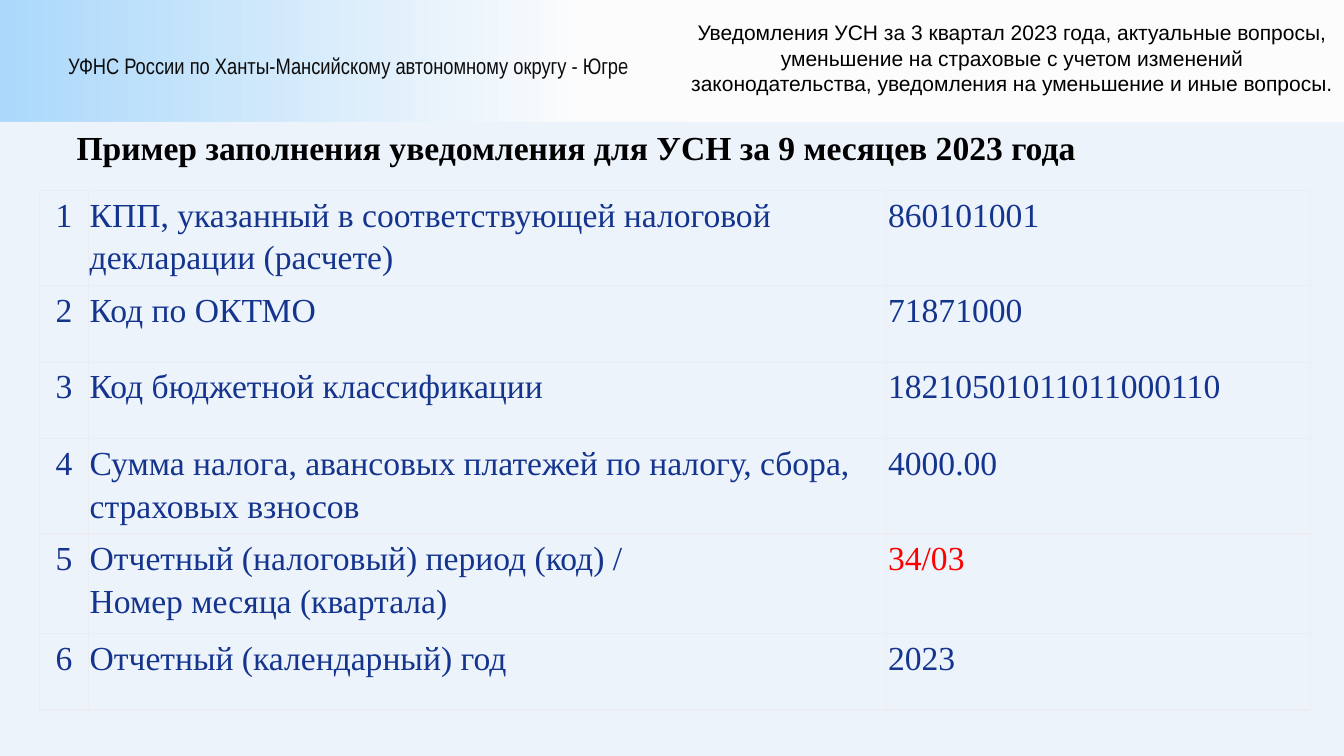
from dataclasses import dataclass

from lxml.etree import SubElement
from pptx import Presentation
from pptx.dml.color import RGBColor as RGB
from pptx.enum.shapes import MSO_SHAPE as SHAPE
from pptx.enum.text import MSO_ANCHOR as ANCHOR, PP_ALIGN as ALIGN
from pptx.oxml.ns import qn
from pptx.util import Cm, Pt


@dataclass(frozen=True)
class Theme:
    sky: str = "ABD8FB"
    header: str = "FCFCFC"
    page: str = "ECF3FA"
    border: str = "EBEDF2"
    ink: str = "000000"
    agency_ink: str = "0D0D0D"
    table_ink: str = "14348E"
    accent: str = "FF0000"
    sans: str = "Arial"
    narrow: str = "Arial Narrow"
    serif: str = "Times New Roman"
    topic_size: int = 15
    agency_size: int = 16
    main_size: int = 24


class Deck:
    def __init__(self, theme, width, height):
        self.theme = theme
        self.prs = Presentation()
        self.prs.slide_width, self.prs.slide_height = Cm(width), Cm(height)
        self.s = self.prs.slides.add_slide(self.prs.slide_layouts[6])

    def style(self, p, text, font, size, color, bold=False, align=ALIGN.LEFT):
        p.text = text
        p.alignment = align
        p.font.name, p.font.size, p.font.bold = font, Pt(size), bold
        p.font.color.rgb = RGB.from_string(color)

    def rect(self, x, y, w, h, color, fade_to=None):
        """Add a borderless rectangle, plain or fading from left to right."""
        sp = self.s.shapes.add_shape(SHAPE.RECTANGLE, Cm(x), Cm(y), Cm(w), Cm(h))
        sp.shadow.inherit = False
        sp.line.fill.background()
        if fade_to:
            sp.fill.gradient()
            sp.fill.gradient_angle = 0
            for stop, stop_color, position in zip(
                    sp.fill.gradient_stops, (color, fade_to), (0, 0.85)):
                stop.color.rgb = RGB.from_string(stop_color)
                stop.position = position
        else:
            sp.fill.solid()
            sp.fill.fore_color.rgb = RGB.from_string(color)

    def text(self, x, y, w, h, text, *style, anchor=ANCHOR.TOP, **options):
        tf = self.s.shapes.add_textbox(Cm(x), Cm(y), Cm(w), Cm(h)).text_frame
        tf.word_wrap = True
        tf.vertical_anchor = anchor
        self.style(tf.paragraphs[0], text, *style, **options)

    def border(self, cell):
        tc_pr = cell._tc.get_or_add_tcPr()
        for side in ("a:lnL", "a:lnR", "a:lnT", "a:lnB"):
            ln = SubElement(tc_pr, qn(side), w=str(Pt(1)))
            fill = SubElement(ln, qn("a:solidFill"))
            SubElement(fill, qn("a:srgbClr"), val=self.theme.border)

    def table(self, x, y, widths, heights, rows, accent_cell):
        th = self.theme
        table = self.s.shapes.add_table(
            len(rows), len(widths), Cm(x), Cm(y),
            Cm(sum(widths)), Cm(sum(heights))).table
        table.first_row = table.horz_banding = False
        for column, width in zip(table.columns, widths):
            column.width = Cm(width)
        for i, (row, height) in enumerate(zip(rows, heights)):
            table.rows[i].height = Cm(height)
            for j, text in enumerate(row):
                cell = table.cell(i, j)
                cell.margin_left = cell.margin_right = Cm(0.03)
                cell.margin_top = cell.margin_bottom = Cm(0.03)
                self.border(cell)
                cell.fill.background()
                p = cell.text_frame.paragraphs[0]
                color = th.accent if (i, j) == accent_cell else th.table_ink
                self.style(p, text, th.serif, th.main_size, color,
                           align=ALIGN.LEFT if j else ALIGN.CENTER)
                p.line_spacing = 1.15


FIELDS = [
    ("КПП, указанный в соответствующей налоговой декларации (расчете)", "860101001"),
    ("Код по ОКТМО", "71871000"),
    ("Код бюджетной классификации", "18210501011011000110"),
    ("Сумма налога, авансовых платежей по налогу, сбора, страховых взносов", "4000.00"),
    ("Отчетный (налоговый) период (код) /\nНомер месяца (квартала)", "34/03"),
    ("Отчетный (календарный) год", "2023"),
]


def main():
    th = Theme()
    width, height, header_height = 33.87, 19.05, 3.07
    topic_left = 17.3
    deck = Deck(th, width, height)

    deck.rect(0, 0, topic_left, header_height, th.sky, fade_to=th.header)
    deck.text(1.47, 1.2, 15.14, 0.95,
              "УФНС России по Ханты-Мансийскому автономному округу - Югре",
              th.narrow, th.agency_size, th.agency_ink)
    deck.rect(0, header_height, width, height - header_height, th.page)
    deck.rect(topic_left, 0, width - topic_left, header_height, th.header)
    deck.text(17.15, 0.38, 16.71, 2.18,
              "Уведомления УСН за 3 квартал 2023 года, актуальные вопросы, "
              "уменьшение на страховые с учетом изменений законодательства, "
              "уведомления на уменьшение и иные вопросы.",
              th.sans, th.topic_size, th.ink, align=ALIGN.CENTER)

    rows = [(str(n), *field) for n, field in enumerate(FIELDS, 1)]
    deck.table(0.99, 4.8, (1.24, 20.12, 10.67),
               (2.26, 1.93, 1.93, 2.26, 2.51, 1.93), rows, accent_cell=(4, 2))
    deck.text(1.68, 3.07, 28.98, 1.27,
              "Пример заполнения уведомления для УСН за 9 месяцев 2023 года",
              th.serif, th.main_size, th.ink, bold=True, anchor=ANCHOR.MIDDLE)
    deck.prs.save("out.pptx")


if __name__ == "__main__":
    main()
